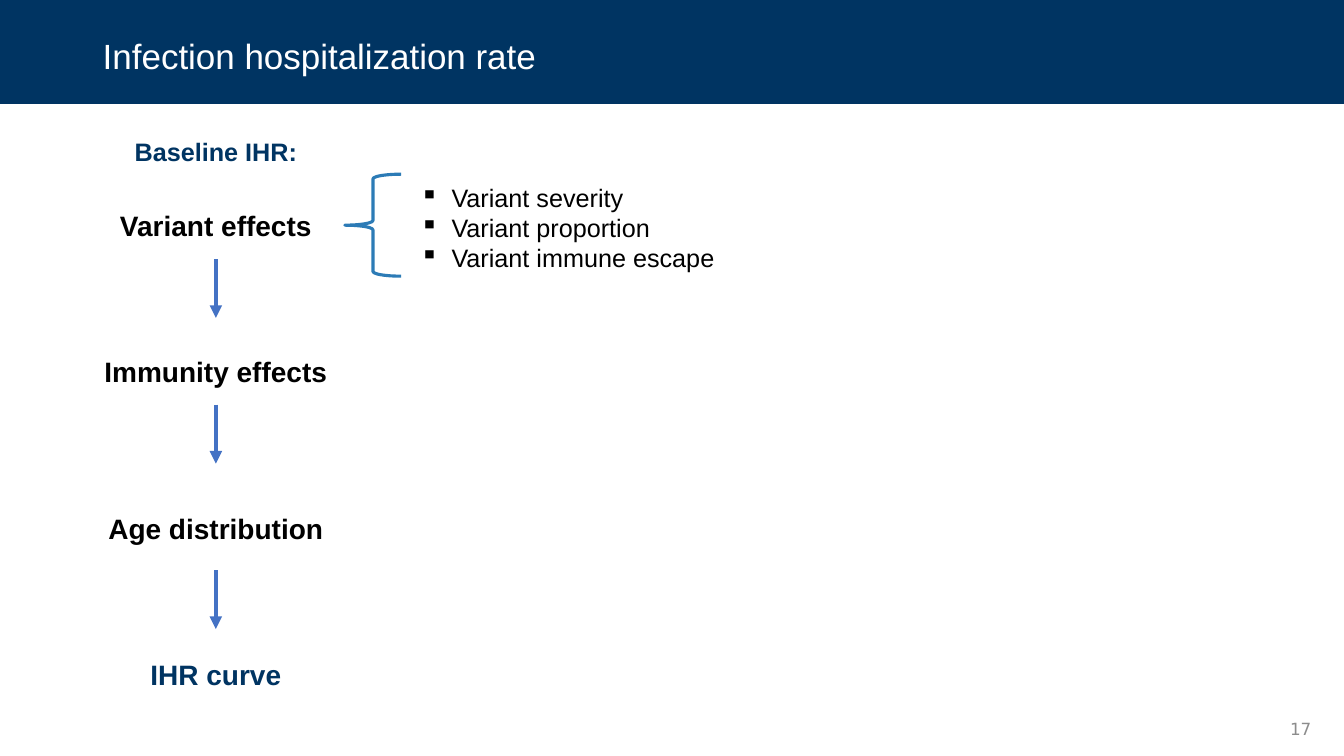
import pptx
import pptx.util
import pptx.dml.color
import pptx.enum.shapes
import pptx.enum.text
import pptx.oxml
import pptx.oxml.ns
from pptx.util import Cm

NAVY, BLACK, WHITE, GRAY = "003462", "000000", "FFFFFF", "8C8C8C"
BRACE_BLUE, ARROW_BLUE = "2C7BB6", "4472C4"
ALIGN = pptx.enum.text.PP_ALIGN
SHAPE = pptx.enum.shapes.MSO_SHAPE

FLOW_CENTER = 5.44
LABEL_WIDTH = 6.2
ARROW_LENGTH = 1.48
FLOW_LABELS = [
    ("Baseline IHR:", 3.3, 1.02, 18, NAVY),
    ("Variant effects", 5.13, 1.11, 20, BLACK),
    ("Immunity effects", 8.8, 1.11, 20, BLACK),
    ("Age distribution", 12.76, 1.11, 20, BLACK),
    ("IHR curve", 16.44, 1.11, 20, NAVY),
]
ARROW_TOPS = [6.53, 10.2, 14.37]
VARIANT_FACTORS = ["Variant severity", "Variant proportion", "Variant immune escape"]


def color(hex_string):
    return pptx.dml.color.RGBColor.from_string(hex_string)


def add_text(page, lines, left, top, width, height, size, hex_color,
             bold=False, align=ALIGN.LEFT, middle=False, font="Arial"):
    box = page.shapes.add_textbox(Cm(left), Cm(top), Cm(width), Cm(height))
    frame = box.text_frame
    frame.word_wrap = True
    if middle:
        frame.vertical_anchor = pptx.enum.text.MSO_ANCHOR.MIDDLE
    frame.text = "\n".join(lines)
    for para in frame.paragraphs:
        para.alignment = align
        for span in para.runs:
            span.font.name = font
            span.font.size = pptx.util.Pt(size)
            span.font.bold = bold
            span.font.color.rgb = color(hex_color)
    return box


def add_bullets(box):
    """Give every paragraph a square bullet with a hanging indent."""
    for para in box.text_frame.paragraphs:
        properties = para._p.get_or_add_pPr()
        properties.set("marL", str(Cm(0.79)))
        properties.set("indent", str(-Cm(0.79)))
        bullet = pptx.oxml.ns.qn("a:buChar")
        properties.append(properties.makeelement(bullet, {"char": "▪"}))


def add_header_band(page, width):
    band = page.shapes.add_shape(SHAPE.RECTANGLE, 0, 0, width, Cm(2.62))
    band.shadow.inherit = False
    band.fill.solid()
    band.fill.fore_color.rgb = color(NAVY)
    band.line.fill.background()


def add_brace(page, left, top, width, height):
    brace = page.shapes.add_shape(SHAPE.LEFT_BRACE, Cm(left), Cm(top), Cm(width), Cm(height))
    brace.shadow.inherit = False
    brace.fill.background()
    brace.line.color.rgb = color(BRACE_BLUE)
    brace.line.width = pptx.util.Pt(2.25)


def add_down_arrow(page, x, top, length):
    arrow = page.shapes.add_connector(
        pptx.enum.shapes.MSO_CONNECTOR.STRAIGHT, Cm(x), Cm(top), Cm(x), Cm(top + length))
    arrow.line.color.rgb = color(ARROW_BLUE)
    arrow.line.width = pptx.util.Pt(3)
    line = arrow.line._get_or_add_ln()
    line.append(line.makeelement(pptx.oxml.ns.qn("a:tailEnd"), {"type": "triangle"}))
    properties = arrow._element.spPr
    properties.append(properties.makeelement(pptx.oxml.ns.qn("a:effectLst"), {}))


def main():
    deck = pptx.Presentation()
    deck.slide_width, deck.slide_height = Cm(33.87), Cm(19.05)
    page = deck.slides.add_slide(deck.slide_layouts[6])

    add_header_band(page, deck.slide_width)
    title = add_text(page, ["Infection hospitalization rate"],
                     2.34, 1.02, 29.21, 0.89, 25, WHITE, middle=True)
    title.text_frame.paragraphs[0].line_spacing = 0.9
    add_text(page, ["17"], 25.4, 17.98, 7.9, 0.76, 12, GRAY,
             align=ALIGN.RIGHT, middle=True, font="DejaVu Sans")

    for label, top, height, size, hex_color in FLOW_LABELS:
        add_text(page, [label], FLOW_CENTER - LABEL_WIDTH / 2, top, LABEL_WIDTH, height,
                 size, hex_color, bold=True, align=ALIGN.CENTER)
    for top in ARROW_TOPS:
        add_down_arrow(page, FLOW_CENTER, top, ARROW_LENGTH)

    add_brace(page, 8.69, 4.39, 1.42, 2.57)
    add_bullets(add_text(page, VARIANT_FACTORS, 10.34, 4.47, 9.32, 2.57, 18, BLACK))

    deck.save("out.pptx")


if __name__ == "__main__":
    main()
